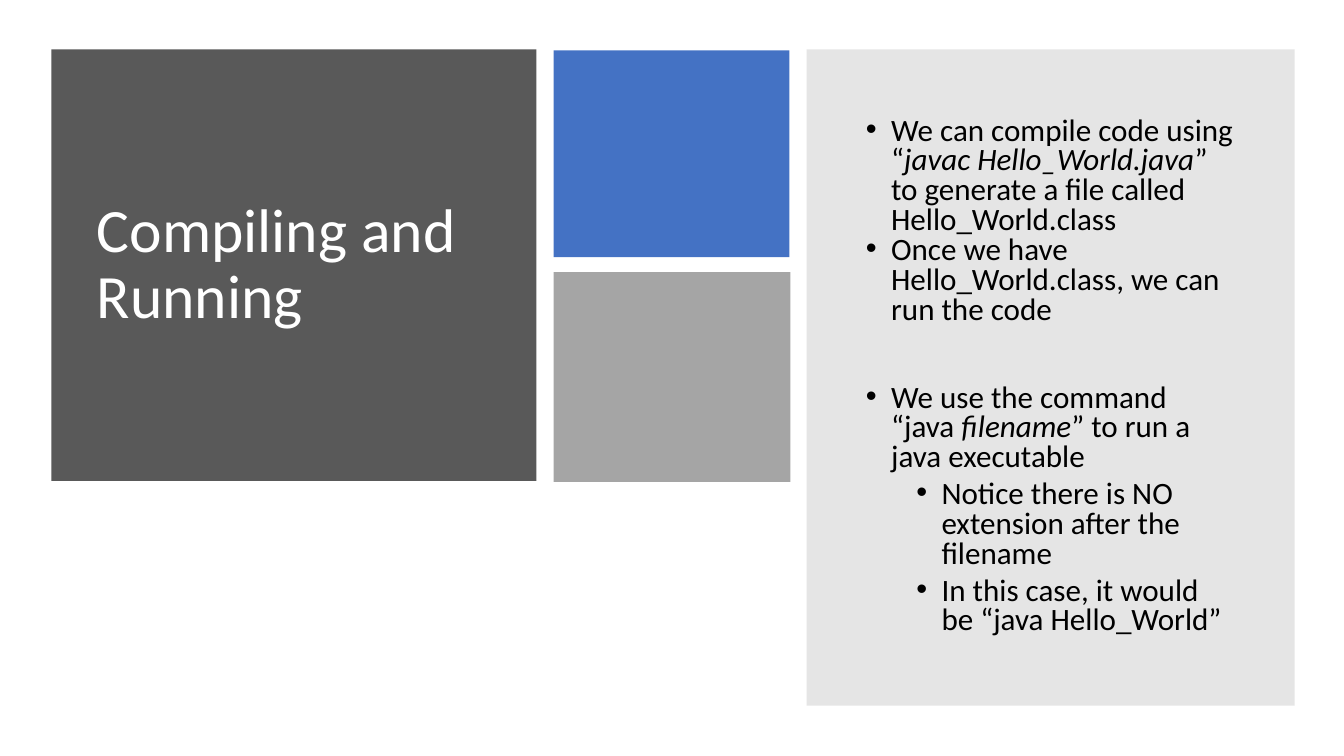
from dataclasses import dataclass

from lxml import etree
from pptx import Presentation
from pptx.dml.color import RGBColor
from pptx.enum.shapes import MSO_SHAPE
from pptx.enum.text import MSO_ANCHOR, MSO_AUTO_SIZE, PP_ALIGN
from pptx.oxml.ns import qn
from pptx.util import Inches, Pt

RECTANGLE = MSO_SHAPE.RECTANGLE
MIDDLE = MSO_ANCHOR.MIDDLE
NO_AUTOFIT = MSO_AUTO_SIZE.NONE
LEFT = PP_ALIGN.LEFT


@dataclass(frozen=True)
class Theme:
    font: str = "Calibri"
    title_size: float = 44
    body_size: float = 22.2
    dark: str = "595959"
    blue: str = "4472C4"
    gray: str = "A5A5A5"
    panel: str = "7F7F7F"
    white: str = "FFFFFF"
    black: str = "000000"


THEME = Theme()


def add_run(paragraph, text, size, color, italic=False):
    run = paragraph.add_run()
    run.text = text
    run.font.name = THEME.font
    run.font.size = Pt(size)
    run.font.italic = italic
    run.font.color.rgb = RGBColor.from_string(color)


def add_bullet(paragraph, indent):
    properties = paragraph._p.get_or_add_pPr()
    properties.set("marL", str(Inches(indent)))
    properties.set("indent", str(Inches(-0.25)))
    bullet_color = etree.SubElement(properties, qn("a:buClr"))
    etree.SubElement(bullet_color, qn("a:srgbClr"), val=THEME.black)
    etree.SubElement(properties, qn("a:buFont"), typeface="Arial")
    etree.SubElement(properties, qn("a:buChar"), char="•")


presentation = Presentation()
presentation.slide_width = Inches(13.33)
presentation.slide_height = Inches(7.5)
slide = presentation.slides.add_slide(presentation.slide_layouts[5])

# Colour blocks: left, top, width, height, fill, opacity in percent
blocks = [
    (0.51, 0.49, 4.81, 4.28, THEME.dark, 100),
    (5.49, 0.5, 2.34, 2.05, THEME.blue, 100),
    (5.49, 2.7, 2.35, 2.08, THEME.gray, 100),
    (8, 0.49, 4.84, 6.51, THEME.panel, 20),
]
for left, top, width, height, color, opacity in blocks:
    block = slide.shapes.add_shape(
        RECTANGLE, Inches(left), Inches(top), Inches(width), Inches(height))
    block.shadow.inherit = False
    block.line.fill.background()
    block.fill.solid()
    block.fill.fore_color.rgb = RGBColor.from_string(color)
    if opacity < 100:
        fill_color = block.element.spPr.find(".//" + qn("a:srgbClr"))
        etree.SubElement(fill_color, qn("a:alpha"), val=str(opacity * 1000))

# Title, brought in front of its dark block
title = slide.shapes.title
title.left, title.top = Inches(0.86), Inches(0.85)
title.width, title.height = Inches(4.1), Inches(3.57)
title.element.getparent().append(title.element)
title.text_frame.auto_size = NO_AUTOFIT
title.text_frame.word_wrap = True
title.text_frame.vertical_anchor = MIDDLE
paragraph = title.text_frame.paragraphs[0]
paragraph.alignment = LEFT
paragraph.line_spacing = 0.9
add_run(paragraph, "Compiling and Running", THEME.title_size, THEME.white)

# Bullets: level, space before in points, (text, italic) runs
bullets = [
    (0, 0, [("We can compile code using “", False),
            ("javac Hello_World.java", True),
            ("” to generate a file called Hello_World.class", False)]),
    (0, 0, [("Once we have Hello_World.class, we can run the code", False)]),
    (0, 41.5, [("We use the command “java ", False),
               ("filename", True),
               ("” to run a java executable", False)]),
    (1, 5, [("Notice there is NO extension after the filename", False)]),
    (1, 5, [("In this case, it would be “java Hello_World”", False)]),
]
body = slide.shapes.add_textbox(
    Inches(8.49), Inches(0.98), Inches(3.84), Inches(5.52))
body_frame = body.text_frame
body_frame.auto_size = NO_AUTOFIT
body_frame.word_wrap = True
body_frame.vertical_anchor = MIDDLE
for index, (level, space_before, runs) in enumerate(bullets):
    paragraph = body_frame.add_paragraph() if index else body_frame.paragraphs[0]
    paragraph.level = level
    paragraph.line_spacing = 0.8
    paragraph.space_before = Pt(space_before)
    add_bullet(paragraph, 0.25 + 0.5 * level)
    for text, italic in runs:
        add_run(paragraph, text, THEME.body_size, THEME.black, italic)

presentation.save("out.pptx")
